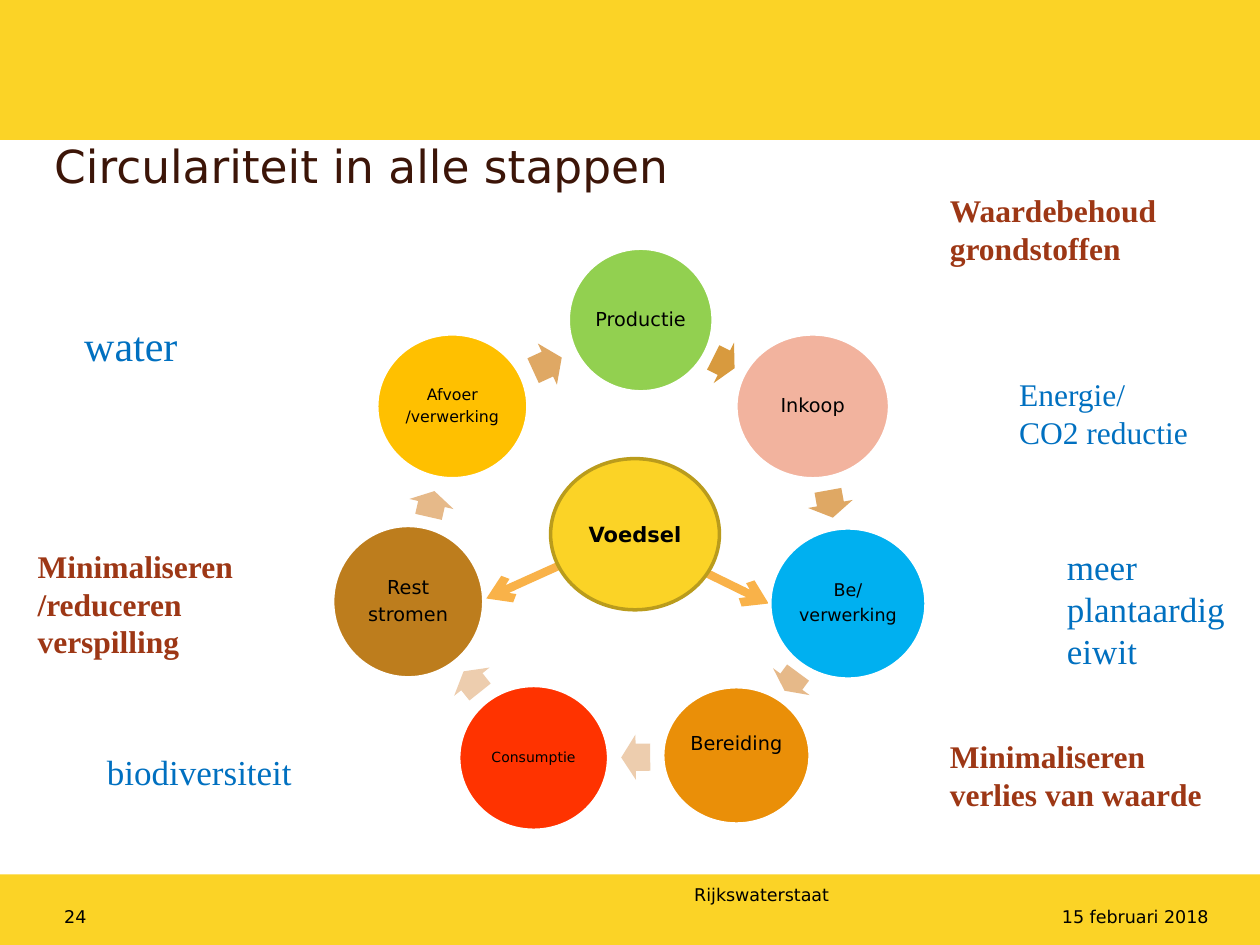
from dataclasses import dataclass
from lxml import etree
from pptx import Presentation
from pptx import util as u
from pptx.dml.color import RGBColor
from pptx.enum import shapes, text
from pptx.oxml.ns import qn


@dataclass(frozen=True)
class Theme:
    sans: str = "DejaVu Sans"
    serif: str = "Times New Roman"
    band: str = "FBD326"
    rim: str = "BA9C1C"
    spoke: str = "F9B249"
    title: str = "3C1508"
    goal: str = "9D3715"
    topic: str = "0070C0"
    ink: str = "000000"
    paper: str = "FFFFFF"
    title_size: int = 26
    centre_size: int = 12
    footer_size: int = 10


THEME = Theme()
COLUMNS, ROWS = 100, 75
LEFT, RIGHT, CENTRE = text.PP_ALIGN.LEFT, text.PP_ALIGN.RIGHT, text.PP_ALIGN.CENTER
TOP, MIDDLE, BOTTOM = text.MSO_ANCHOR.TOP, text.MSO_ANCHOR.MIDDLE, text.MSO_ANCHOR.BOTTOM

BANDS = [(0, 0, 100, 11.1), (0, 69.4, 100, 5.6)]
SPOKES = [((38.6, 47.5), (48.8, 42.9)), ((50.8, 42.9), (61, 47.9))]
HEADING = ("Circulariteit in alle stappen", (4.3, 10.7, 91.9, 5.4))
FOOTERS = [
    ("Rijkswaterstaat", (55.1, 70.2, 34.5, 1.3), LEFT, TOP),
    ("24", (5.1, 72.3, 20.8, 1.3), LEFT, BOTTOM),
    ("15 februari 2018", (79.4, 72.3, 16.5, 1.3), RIGHT, BOTTOM),
]
CORE = ("Voedsel", (43.7, 36.4, 13.4, 12))
GOALS = [
    (["Waardebehoud grondstoffen"], (74.4, 14.7, 19.5, 11.1), 18),
    (["Minimaliseren/reduceren verspilling"], (2, 42.9, 18.1, 10.1), 18),
    (["Minimaliseren verlies van waarde"], (74.4, 58, 22.8, 7.1), 18),
]
TOPICS = [
    (["water"], (5.7, 24.9, 10.7, 5.1), 24),
    (["Energie/", "CO2 reductie"], (79.9, 29.3, 16.5, 7.1), 18),
    (["biodiversiteit"], (7.5, 59.1, 18.1, 4.4), 20),
    (["meer", "plantaardig", "eiwit"], (83.7, 42.8, 16.3, 11.1), 20),
]
STEPS = [
    (["Productie"], (45.1, 19.7, 11.5, 11.4), "92D050", 11, 0),
    (["Inkoop"], (58.4, 26.5, 12.2, 11.5), "F2B39E", 11, 0),
    (["Be/", "verwerking"], (61.1, 41.9, 12.4, 12), "00B0F0", 10, 0),
    (["Bereiding"], (52.6, 54.5, 11.7, 10.9), "EA8F08", 11, 1.8),
    (["Consumptie"], (36.4, 54.4, 11.9, 11.5), "FF3300", 8, 0),
    (["Rest", "stromen"], (26.4, 41.7, 12, 12.1), "BD7D1D", 11, 0),
    (["Afvoer", "/verwerking"], (29.9, 26.5, 12, 11.5), "FFC000", 9, 0),
]
ARROWS = [
    ((56.5, 27, 1.9, 3.6), 26.7, "D89A3E"),
    ((64.8, 38.2, 2.2, 3.6), 79.8, "DFA864"),
    ((61.9, 52.3, 1.8, 3.6), 126.4, "E6B989"),
    ((49.3, 58.3, 2.3, 3.6), 179.3, "EDCDAE"),
    ((36.4, 52.3, 2.1, 3.6), 231.4, "EDCDAE"),
    ((33.2, 38.2, 2.1, 3.6), 282.9, "E6B989"),
    ((42.2, 27.1, 2.5, 3.6), 335.2, "DFA864"),
]

deck = Presentation()
deck.slide_width, deck.slide_height = u.Inches(10), u.Inches(7.5)
page = deck.slides.add_slide(deck.slide_layouts[6])


def place(*cells):
    steps = (deck.slide_width / COLUMNS, deck.slide_height / ROWS)
    return [round(cell * steps[index % 2]) for index, cell in enumerate(cells)]


def add_block(kind, cells, fill, line=None):
    block = page.shapes.add_shape(kind, *place(*cells))
    block.shadow.inherit = False
    block.fill.solid()
    block.fill.fore_color.rgb = RGBColor.from_string(fill)
    if line:
        block.line.color.rgb = RGBColor.from_string(line)
        block.line.width = u.Pt(2)
    else:
        block.line.fill.background()
    return block


def write(box, lines, size, color, font=THEME.sans, bold=False, align=LEFT,
          anchor=TOP, insets=None, spacing=None, after=0):
    frame = box.text_frame
    frame.word_wrap = True
    frame.vertical_anchor = anchor
    if insets:
        (frame.margin_left, frame.margin_top, frame.margin_right,
         frame.margin_bottom) = place(*insets)
    for index, line in enumerate(lines):
        para = frame.add_paragraph() if index else frame.paragraphs[0]
        para.alignment = align
        para.space_after = u.Pt(after)
        if spacing:
            para.line_spacing = spacing
        span = para.add_run()
        span.text = line
        span.font.name, span.font.size, span.font.bold = font, u.Pt(size), bold
        span.font.color.rgb = RGBColor.from_string(color)


def add_text(lines, cells, size, color, **style):
    box = page.shapes.add_textbox(*place(*cells))
    write(box, lines, size, color, **style)
    return box


def add_spoke(start, end):
    spoke = page.shapes.add_connector(shapes.MSO_CONNECTOR.STRAIGHT, *place(*start, *end))
    spoke.line.color.rgb = RGBColor.from_string(THEME.spoke)
    spoke.line.width = u.Pt(4.75)
    outline = spoke.line._get_or_add_ln()
    for tag in ("a:headEnd", "a:tailEnd"):
        etree.SubElement(outline, qn(tag), type="arrow")
    etree.SubElement(spoke._element.spPr, qn("a:effectLst"))


for cells in BANDS:
    add_block(shapes.MSO_SHAPE.RECTANGLE, cells, THEME.band)
for start, end in SPOKES:
    add_spoke(start, end)

heading, cells = HEADING
add_text([heading], cells, THEME.title_size, THEME.title, anchor=MIDDLE,
         insets=(0, 0, 0, 0.5))
for label, cells, align, anchor in FOOTERS:
    add_text([label], cells, THEME.footer_size, THEME.ink, align=align,
             anchor=anchor, insets=(0, 0, 0, 0))

label, cells = CORE
core = add_block(shapes.MSO_SHAPE.OVAL, cells, THEME.band, THEME.rim)
write(core, [label], THEME.centre_size, THEME.ink, bold=True, align=CENTRE, anchor=MIDDLE)

for notes, color, bold in ((GOALS, THEME.goal, True), (TOPICS, THEME.topic, False)):
    for lines, cells, size in notes:
        box = add_text(lines, cells, size, color, font=THEME.serif, bold=bold)
        box.text_frame.auto_size = text.MSO_AUTO_SIZE.SHAPE_TO_FIT_TEXT

for (lines, cells, fill, size, lift), (arrow_cells, angle, tint) in zip(STEPS, ARROWS):
    step = add_block(shapes.MSO_SHAPE.OVAL, cells, fill, THEME.paper)
    write(step, lines, size, THEME.ink, align=CENTRE, anchor=MIDDLE,
          insets=(0.1, 0.1, 0.1, 0.1 + lift), spacing=0.9, after=0.35 * size)
    arrow = add_block(shapes.MSO_SHAPE.RIGHT_ARROW, arrow_cells, tint)
    arrow.adjustments[0], arrow.adjustments[1] = 0.6, 0.5
    arrow.rotation = angle

deck.save("out.pptx")
